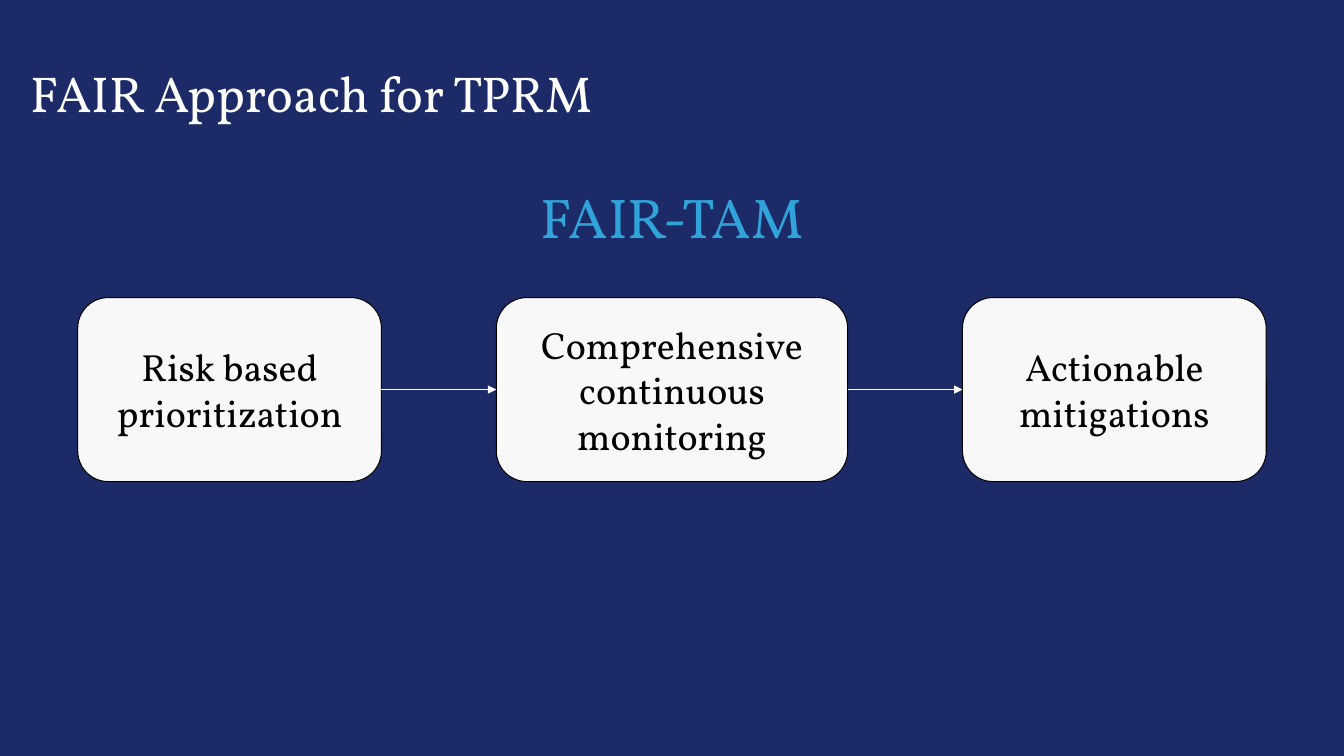
from itertools import pairwise

from lxml.etree import SubElement
from pptx import Presentation
from pptx.dml.color import RGBColor
from pptx.enum.shapes import MSO_CONNECTOR as Link, MSO_SHAPE as Preset
from pptx.enum.text import MSO_ANCHOR as Anchor, PP_ALIGN as Align
from pptx.oxml.ns import qn
from pptx.util import Pt

COLORS = {
    "navy": "1C2B68",
    "white": "FFFFFF",
    "card": "F8F8F8",
    "black": "000000",
    "sky": "30A3DA",
}
SLIDE_WIDTH, SLIDE_HEIGHT = 960, 540
STEPS = [
    ("Risk based prioritization", 217),
    ("Comprehensive continuous monitoring", 251),
    ("Actionable mitigations", 217),
]
STEP_TOP, STEP_HEIGHT, STEP_GAP = 212.5, 131.5, 82


def rgb(name):
    return RGBColor.from_string(COLORS[name])


class Deck:
    font = "Vollkorn"
    line_width = 0.75

    def __init__(self):
        self.show = Presentation()
        self.show.slide_width = Pt(SLIDE_WIDTH)
        self.show.slide_height = Pt(SLIDE_HEIGHT)
        self.slide = self.show.slides.add_slide(self.show.slide_layouts[6])
        backdrop = self.slide.background.fill
        backdrop.solid()
        backdrop.fore_color.rgb = rgb("navy")

    def set_text(self, shape, text, size, color, align, anchor, inset):
        frame = shape.text_frame
        frame.text = text
        frame.word_wrap = True
        frame.vertical_anchor = anchor
        frame.margin_left = frame.margin_right = Pt(inset[0])
        frame.margin_top = frame.margin_bottom = Pt(inset[1])
        paragraph = frame.paragraphs[0]
        paragraph.alignment = align
        font = paragraph.runs[0].font
        font.name = self.font
        font.size = Pt(size)
        font.color.rgb = rgb(color)
        return paragraph

    def label(self, box, text, size, color, align=Align.CENTER,
              anchor=Anchor.TOP, inset=(9.4, 9.4)):
        shape = self.slide.shapes.add_textbox(*map(Pt, box))
        return self.set_text(shape, text, size, color, align, anchor, inset)

    def card(self, box, text):
        shape = self.slide.shapes.add_shape(
            Preset.ROUNDED_RECTANGLE, *map(Pt, box))
        shape.shadow.inherit = False
        shape.fill.solid()
        shape.fill.fore_color.rgb = rgb("card")
        shape.line.color.rgb = rgb("black")
        shape.line.width = Pt(self.line_width)
        self.set_text(shape, text, 27, "black", Align.CENTER, Anchor.MIDDLE,
                      (9.4, 9.4))
        return shape

    def arrow(self, source, target):
        middle = source.top + source.height // 2
        link = self.slide.shapes.add_connector(
            Link.STRAIGHT, source.left + source.width, middle,
            target.left, middle)
        link.begin_connect(source, 3)
        link.end_connect(target, 1)
        link.line.color.rgb = rgb("white")
        link.line.width = Pt(self.line_width)
        properties = link.element.spPr
        SubElement(properties.find(qn("a:ln")), qn("a:tailEnd"),
                   type="triangle")
        SubElement(properties, qn("a:effectLst"))


def main():
    deck = Deck()
    title = deck.label((15, 16.5, 828, 104.5), "FAIR Approach for TPRM", 36,
                       "white", Align.LEFT, Anchor.MIDDLE, (7.2, 3.6))
    title.line_spacing = 0.9

    total = sum(width for _, width in STEPS) + STEP_GAP * (len(STEPS) - 1)
    left = (SLIDE_WIDTH - total) / 2
    cards = []
    for step, width in STEPS:
        cards.append(deck.card((left, STEP_TOP, width, STEP_HEIGHT), step))
        left += width + STEP_GAP

    deck.label((340, 121, 280, 67.5), "FAIR-TAM", 40, "sky")

    for source, target in pairwise(cards):
        deck.arrow(source, target)

    deck.show.save("out.pptx")


if __name__ == "__main__":
    main()
